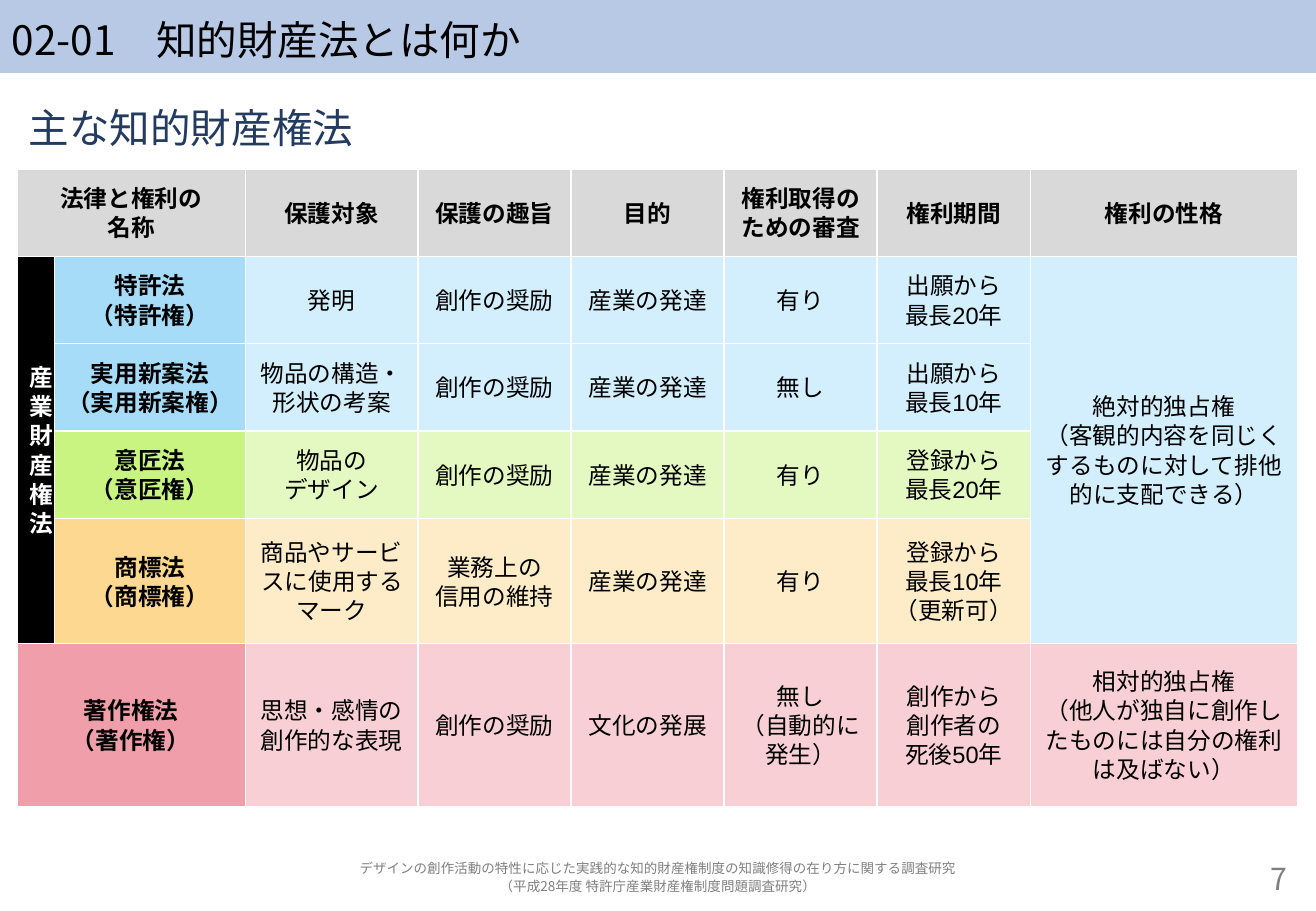
from lxml import etree
from pptx import Presentation, util as u
from pptx.dml.color import RGBColor
from pptx.enum import lang, text
from pptx.oxml import ns

WIDTH, HEIGHT = 10.83, 7.5
MARGIN = 0.14
CONTENT = WIDTH - 2 * MARGIN
FOOTER_TOP, FOOTER_HEIGHT = 7.06, 0.31
FONT, TABLE_FONT = "Noto Sans CJK JP", "Arial"
COLORS = {
    "black": "000000", "white": "FFFFFF", "bar": "B7C9E5", "navy": "233B61",
    "grey": "808080",
}
# Per table row: fill of the law's name, fill of its details
ROW_FILLS = [
    ("D9D9D9", "D9D9D9"), ("A7DCF9", "D3EEFC"), ("A7DCF9", "D3EEFC"),
    ("C9F482", "E4F9C1"), ("FCD890", "FDECC7"), ("F09FAA", "F8CFD5"),
]
COLUMN_WIDTHS = [0.31, 1.57, 1.42] + [1.26] * 4 + [2.2]
# Each row is as tall as its longest cell
ROW_LINES = [2, 2, 2, 2, 3, 4]
LINE_HEIGHT, CELL_PADDING = 0.31, 0.1
ROW_HEIGHTS = [lines * LINE_HEIGHT + CELL_PADDING for lines in ROW_LINES]
TABLE_TOP = 1.39
NAME_COLUMNS = 2
MERGES = [((0, 0), (0, 1)), ((1, 0), (4, 0)), ((1, 7), (4, 7)), ((5, 0), (5, 1))]
# None marks a cell covered by a merge
LAWS = [
    ["法律と権利の\n名称", None, "保護対象", "保護の趣旨", "目的",
     "権利取得のための審査", "権利期間", "権利の性格"],
    ["産業財産権法", "特許法\n（特許権）", "発明", "創作の奨励", "産業の発達", "有り",
     "出願から\n最長20年",
     "絶対的独占権\n（客観的内容を同じくするものに対して排他的に支配できる）"],
    [None, "実用新案法\n（実用新案権）", "物品の構造・形状の考案", "創作の奨励",
     "産業の発達", "無し", "出願から\n最長10年", None],
    [None, "意匠法\n（意匠権）", "物品の\nデザイン", "創作の奨励", "産業の発達", "有り",
     "登録から\n最長20年", None],
    [None, "商標法\n（商標権）", "商品やサービスに使用するマーク", "業務上の\n信用の維持",
     "産業の発達", "有り", "登録から\n最長10年\n（更新可）", None],
    ["著作権法\n（著作権）", None, "思想・感情の創作的な表現", "創作の奨励", "文化の発展",
     "無し\n（自動的に発生）", "創作から\n創作者の\n死後50年",
     "相対的独占権\n（他人が独自に創作したものには自分の権利は及ばない）"],
]


def write(frame, content, size, color, align="LEFT", font=FONT, bold=False):
    """Fill a text frame, one paragraph per line of content."""
    frame.word_wrap = True
    font_format = {"size": u.Pt(size), "bold": bold, "name": font,
                   "language_id": lang.MSO_LANGUAGE_ID.JAPANESE}
    for index, line in enumerate(content.split("\n")):
        paragraph = frame.paragraphs[0] if index == 0 else frame.add_paragraph()
        paragraph.alignment = getattr(text.PP_ALIGN, align)
        paragraph.line_spacing = 1.1
        run = paragraph.add_run()
        run.text = line
        for name, value in font_format.items():
            setattr(run.font, name, value)
        run.font.color.rgb = RGBColor.from_string(color)
        east_asian = etree.SubElement(run.font._element, ns.qn("a:ea"))
        east_asian.set("typeface", font)


def add_text(slide, box, content, size, color, align="LEFT", anchor="MIDDLE", fill=None):
    shape = slide.shapes.add_textbox(*map(u.Inches, box))
    shape.text_frame.vertical_anchor = getattr(text.MSO_ANCHOR, anchor)
    write(shape.text_frame, content, size, COLORS[color], align)
    if fill:
        shape.fill.solid()
        shape.fill.fore_color.rgb = RGBColor.from_string(COLORS[fill])


def add_borders(cell):
    properties = cell._tc.get_or_add_tcPr()
    for side in ("lnL", "lnR", "lnT", "lnB"):
        line = etree.SubElement(properties, ns.qn(f"a:{side}"), w=str(u.Pt(1)))
        fill = etree.SubElement(line, ns.qn("a:solidFill"))
        etree.SubElement(fill, ns.qn("a:srgbClr"), val=COLORS["white"])


def style_cell(cell, fill):
    add_borders(cell)
    cell.fill.solid()
    cell.fill.fore_color.rgb = RGBColor.from_string(fill)
    cell.vertical_anchor = text.MSO_ANCHOR.MIDDLE


def add_law_table(slide):
    box = (MARGIN, TABLE_TOP, CONTENT, sum(ROW_HEIGHTS))
    table = slide.shapes.add_table(
        len(ROW_HEIGHTS), len(COLUMN_WIDTHS), *map(u.Inches, box)).table
    table.first_row = table.horz_banding = False
    for column, width in zip(table.columns, COLUMN_WIDTHS):
        column.width = u.Inches(width)
    for row, height in zip(table.rows, ROW_HEIGHTS):
        row.height = u.Inches(height)
    for first, last in MERGES:
        table.cell(*first).merge(table.cell(*last))

    for r, (row, (name_fill, detail_fill)) in enumerate(zip(LAWS, ROW_FILLS)):
        for c, content in enumerate(row):
            cell = table.cell(r, c)
            is_name = c < NAME_COLUMNS
            is_group = c == 0 and 0 < r < len(LAWS) - 1
            fill = name_fill if is_name else detail_fill
            style_cell(cell, COLORS["black"] if is_group else fill)
            if is_group:
                cell._tc.tcPr.set("vert", "eaVert")
            if content:
                color = COLORS["white" if is_group else "black"]
                write(cell.text_frame, content, 14, color, "CENTER",
                      TABLE_FONT, bold=r == 0 or is_name)


def main():
    presentation = Presentation()
    presentation.slide_width = u.Inches(WIDTH)
    presentation.slide_height = u.Inches(HEIGHT)
    slide = presentation.slides.add_slide(presentation.slide_layouts[6])

    add_text(slide, (0, 0, WIDTH, 0.08 * HEIGHT), "02-01　知的財産法とは何か",
             24, "black", fill="bar")
    add_law_table(slide)
    add_text(slide, (MARGIN, 0.76, CONTENT, 0.47), "主な知的財産権法",
             24, "navy", anchor="TOP")
    number_width = CONTENT / 8
    add_text(slide, (WIDTH - MARGIN - number_width, FOOTER_TOP, number_width, FOOTER_HEIGHT),
             "7", 18, "grey", "RIGHT")
    add_text(slide, (MARGIN, FOOTER_TOP, CONTENT, FOOTER_HEIGHT),
             "デザインの創作活動の特性に応じた実践的な知的財産権制度の知識修得の在り方に関する調査研究\n"
             "（平成28年度 特許庁産業財産権制度問題調査研究）", 8, "grey", "CENTER")
    presentation.save("out.pptx")


if __name__ == "__main__":
    main()
